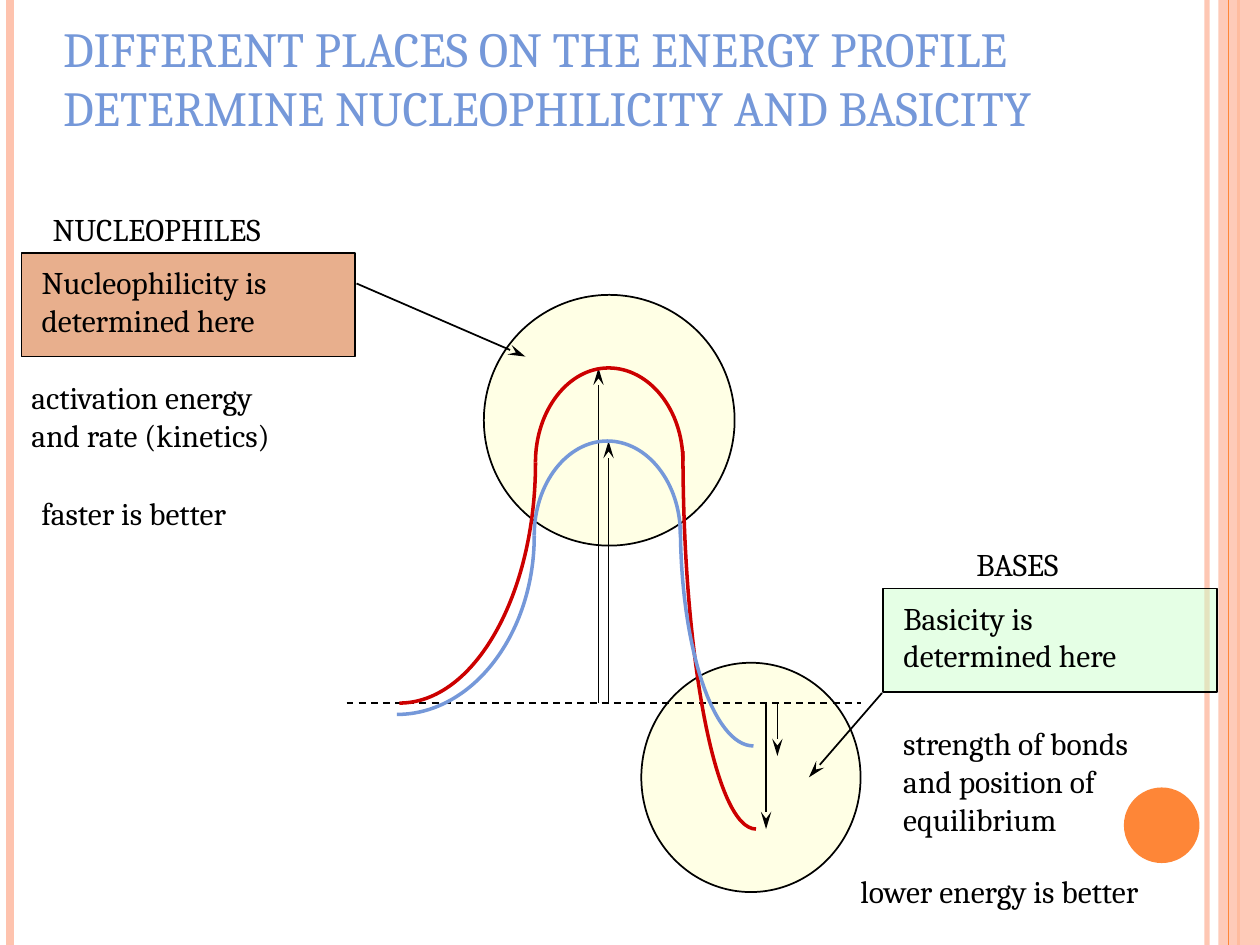
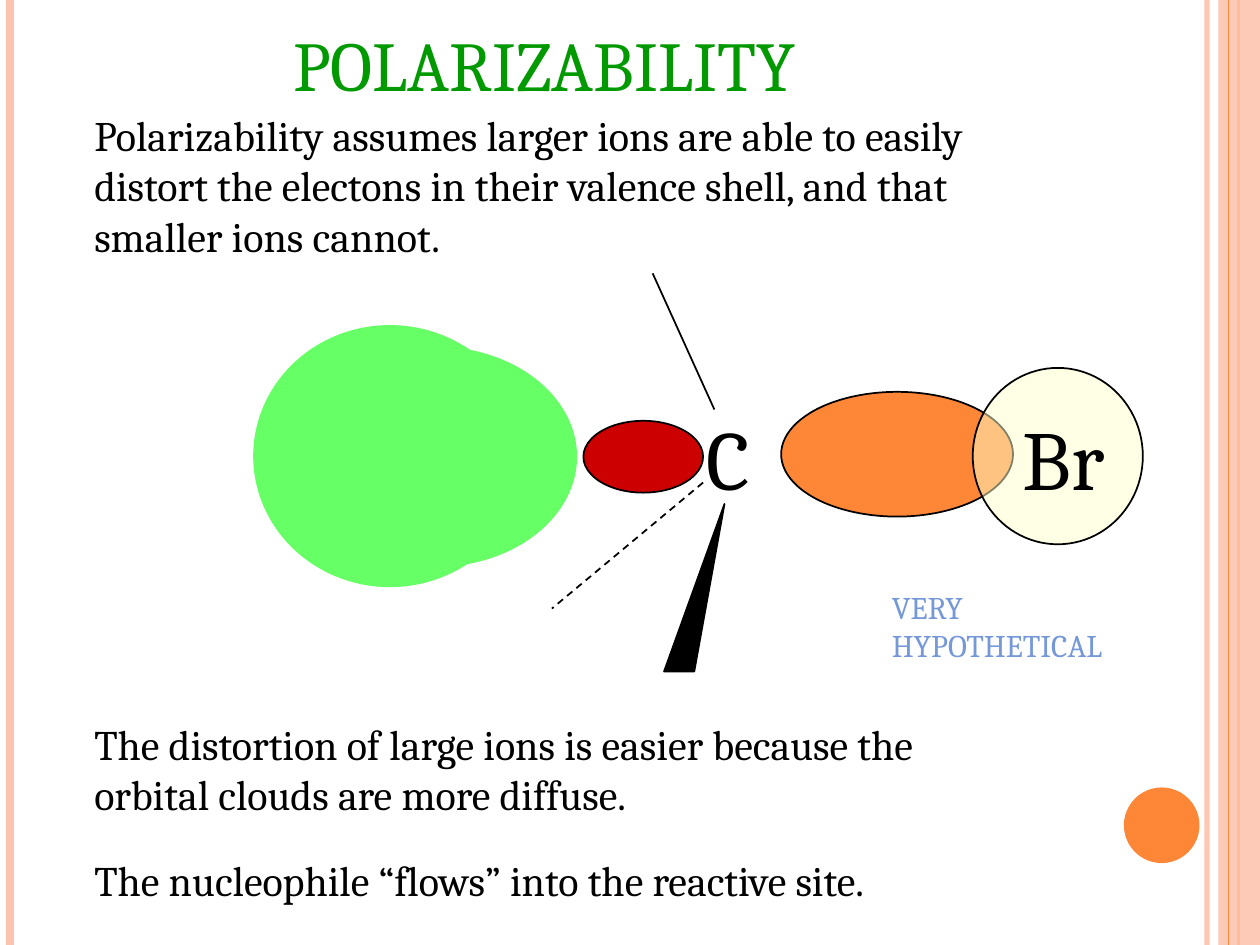
from dataclasses import dataclass

import lxml.etree
import pptx
import pptx.dml.color
import pptx.enum.dml
import pptx.enum.shapes
import pptx.enum.text
import pptx.oxml.ns
import pptx.util

Inches = pptx.util.Inches
Pt = pptx.util.Pt
qn = pptx.oxml.ns.qn
Preset = pptx.enum.shapes.MSO_SHAPE

# Distance of a control point from its end, as a share of the radius, in a quarter ellipse
QUARTER_ARC = 0.55


@dataclass(frozen=True)
class Theme:
    font: str = "Cambria"
    black: str = "000000"
    blue: str = "7598D9"
    red: str = "CC0000"
    title_green: str = "009900"
    cloud_green: str = "66FF66"
    pale_green: str = "CCFFCC"
    rust: str = "D2611C"
    cream: str = "FFFFCC"
    orange: str = "FE8637"
    peach: str = "FEC3AE"
    label_size: int = 18
    body_size: int = 24
    long_title_size: int = 28
    short_title_size: int = 40
    atom_size: int = 48
    outline: float = 1
    curve: float = 2


THEME = Theme()


def rgb(color):
    return pptx.dml.color.RGBColor.from_string(color)


def set_opacity(shape, percent):
    """Apply opacity to the first colour of a shape: its fill, or a connector's line."""
    color = shape._element.spPr.find(".//" + qn("a:srgbClr"))
    lxml.etree.SubElement(color, qn("a:alpha")).set("val", str(percent * 1000))


def set_line(shape, color, width=THEME.outline):
    shape.line.color.rgb = rgb(color)
    shape.line.width = Pt(width)


def write_text(shape, lines, *, size=THEME.label_size, color=THEME.black, margins=(0.1, 0.05)):
    """Write one paragraph per line, with margins given as (sides, top and bottom)."""
    frame = shape.text_frame
    frame.word_wrap = True
    frame.auto_size = pptx.enum.text.MSO_AUTO_SIZE.NONE
    frame.vertical_anchor = pptx.enum.text.MSO_ANCHOR.TOP
    frame.margin_left = frame.margin_right = Inches(margins[0])
    frame.margin_top = frame.margin_bottom = Inches(margins[1])
    frame.text = "\n".join(lines)
    for paragraph in frame.paragraphs:
        paragraph.alignment = pptx.enum.text.PP_ALIGN.LEFT
        paragraph.font.name = THEME.font
        paragraph.font.size = Pt(size)
        paragraph.font.color.rgb = rgb(color)


def add_label(slide, left, top, width, height, lines, **text_format):
    box = slide.shapes.add_textbox(Inches(left), Inches(top), Inches(width), Inches(height))
    write_text(box, lines, **text_format)


def set_title(slide, left, top, width, height, lines, **text_format):
    title = slide.shapes.title
    title.left, title.top = Inches(left), Inches(top)
    title.width, title.height = Inches(width), Inches(height)
    write_text(title, lines, **text_format)


def add_figure(slide, preset, left, top, width, height, fill, *, line=THEME.black, opacity=None):
    shape = slide.shapes.add_shape(
        preset, Inches(left), Inches(top), Inches(width), Inches(height))
    shape.shadow.inherit = False
    shape.fill.solid()
    shape.fill.fore_color.rgb = rgb(fill)
    if opacity is not None:
        set_opacity(shape, opacity)
    if line is None:
        shape.line.fill.background()
    else:
        set_line(shape, line)
    return shape


def add_callout(slide, left, top, fill, lines):
    box = add_figure(slide, Preset.RECTANGLE, left, top, 2.65, 0.82, fill, opacity=50)
    write_text(box, lines, margins=(0.16, 0.08))


def add_line(slide, start, end, *, color=THEME.black, width=THEME.outline,
             dashed=False, arrow=False, opacity=None):
    connector = slide.shapes.add_connector(
        pptx.enum.shapes.MSO_CONNECTOR.STRAIGHT, *map(Inches, (*start, *end)))
    set_line(connector, color, width)
    if dashed:
        connector.line.dash_style = pptx.enum.dml.MSO_LINE.DASH
    if arrow:
        line = connector.line._get_or_add_ln()
        head = lxml.etree.SubElement(line, qn("a:tailEnd"))
        head.set("type", "stealth")
        head.set("len", "lg")
    if opacity is not None:
        set_opacity(connector, opacity)
    lxml.etree.SubElement(connector._element.spPr, qn("a:effectLst"))


def add_outline(slide, points, *, closed):
    corners = [(Inches(x), Inches(y)) for x, y in points]
    builder = slide.shapes.build_freeform(*corners[0])
    builder.add_line_segments(corners[1:], close=closed)
    shape = builder.convert_to_shape()
    shape.shadow.inherit = False
    return shape


def add_curve(slide, points, color):
    """Draw Bezier curves through a start and then two controls and an end for each."""
    curve = add_outline(slide, points, closed=False)
    outline = curve._element.spPr.find(".//" + qn("a:path"))
    segments = outline.findall(qn("a:lnTo"))
    for first in range(0, len(segments), 3):
        bezier = lxml.etree.SubElement(outline, qn("a:cubicBezTo"))
        for segment in segments[first:first + 3]:
            bezier.append(segment[0])
            outline.remove(segment)
    curve.fill.background()
    set_line(curve, color, THEME.curve)


def quarter_arc(start, end, *, level_start):
    """Return the controls and end of a quarter ellipse, level at one end, upright at the other."""
    (x1, y1), (x2, y2) = start, end
    across, down = QUARTER_ARC * (x2 - x1), QUARTER_ARC * (y2 - y1)
    if level_start:
        return [(x1 + across, y1), (x2, y2 - down), end]
    return [(x1, y1 + down), (x2 - across, y2), end]


def add_energy_profile(slide, color, *, start, left_side, top, right_side, tail_start, end):
    """Draw a reaction curve as a peak, a rising foot and a falling tail."""
    add_curve(slide, [left_side, *quarter_arc(left_side, top, level_start=False),
                      *quarter_arc(top, right_side, level_start=True)], color)
    add_curve(slide, [left_side, *quarter_arc(left_side, start, level_start=False)], color)
    add_curve(slide, [end, *quarter_arc(end, tail_start, level_start=True)], color)


def add_frame(slide):
    """Draw the side bands and the disc that both slides share."""
    def add_rule(x, color, width, opacity=None):
        add_line(slide, (x, 0), (x, 7.5), color=color, width=width, opacity=opacity)

    add_rule(9.58, THEME.peach, 3, opacity=93)
    add_rule(0.08, THEME.peach, 4.5)
    add_rule(9.83, THEME.orange, 1.5)
    add_figure(slide, Preset.RECTANGLE, 9.67, 0, 0.33, 7.5, THEME.peach, line=None, opacity=87)
    add_rule(9.75, THEME.orange, 0.75)
    add_figure(slide, Preset.OVAL, 8.92, 6.25, 0.6, 0.6, THEME.orange, line=None)


def add_framed_slide(presentation):
    title_only_layout = presentation.slide_layouts[5]
    slide = presentation.slides.add_slide(title_only_layout)
    add_frame(slide)
    return slide


def build_energy_slide(presentation):
    slide = add_framed_slide(presentation)
    set_title(slide, 0.4, 0.1, 9.33, 1.03,
              ["DIFFERENT PLACES ON THE ENERGY PROFILE",
               "DETERMINE NUCLEOPHILICITY AND BASICITY"],
              size=THEME.long_title_size, color=THEME.blue)

    add_callout(slide, 7.01, 4.67, THEME.pale_green, ["Basicity is", "determined here"])
    add_callout(slide, 0.17, 2.01, THEME.rust, ["Nucleophilicity is", "determined here"])
    add_figure(slide, Preset.OVAL, 5.09, 5.26, 1.74, 1.82, THEME.cream, opacity=50)
    add_figure(slide, Preset.OVAL, 3.84, 2.34, 1.99, 1.99, THEME.cream, opacity=50)

    add_label(slide, 0.32, 1.62, 2.42, 0.43, ["NUCLEOPHILES"])
    add_label(slide, 0.15, 2.95, 2.65, 0.77, ["activation energy", "and rate (kinetics)"])
    add_label(slide, 0.23, 3.87, 2.18, 0.43, ["faster is better"])
    add_label(slide, 7.65, 4.28, 1.16, 0.43, ["BASES"])
    add_label(slide, 7.07, 5.7, 2.58, 1.1, ["strength of bonds", "and position of", "equilibrium"])
    add_label(slide, 6.73, 6.87, 3.16, 0.43, ["lower energy is better"])

    add_line(slide, (2.83, 2.25), (4.17, 2.83), arrow=True)
    add_line(slide, (7, 5.5), (6.42, 6.17), arrow=True)

    baseline = 5.58
    add_line(slide, (2.75, baseline), (6.83, baseline), dashed=True)
    for x, energy_level in ((4.75, 2.92), (4.83, 3.5), (6.08, 6.58), (6.17, 6)):
        add_line(slide, (x, baseline), (x, energy_level), arrow=True)

    add_energy_profile(slide, THEME.red, start=(3.17, 5.58), left_side=(4.25, 3.67),
                       top=(4.83, 2.92), right_side=(5.42, 3.66),
                       tail_start=(5.42, 3.58), end=(6, 6.58))
    add_energy_profile(slide, THEME.blue, start=(3.15, 5.67), left_side=(4.24, 4.25),
                       top=(4.82, 3.5), right_side=(5.4, 4.24),
                       tail_start=(5.4, 4.17), end=(5.98, 5.92))


def build_polarizability_slide(presentation):
    slide = add_framed_slide(presentation)
    set_title(slide, 2.23, 0.12, 4.86, 0.77, ["POLARIZABILITY"],
              size=THEME.short_title_size, color=THEME.title_green)
    add_label(slide, 0.65, 0.82, 8.47, 1.3,
              ["Polarizability assumes larger ions are able to easily",
               "distort the electons in their valence shell, and that",
               "smaller ions cannot."], size=THEME.body_size)

    add_figure(slide, Preset.OVAL, 4.63, 3.34, 0.95, 0.57, THEME.red)
    add_label(slide, 5.51, 3.18, 0.67, 0.9, ["C"], size=THEME.atom_size)
    add_line(slide, (5.18, 2.17), (5.67, 3.25))
    add_line(slide, (5.58, 3.83), (4.38, 4.83), dashed=True)
    wedge_bond = add_outline(slide, [(5.75, 4), (5.27, 5.33), (5.51, 5.33)], closed=True)
    wedge_bond.fill.solid()
    wedge_bond.fill.fore_color.rgb = rgb(THEME.black)
    set_line(wedge_bond, THEME.black)

    add_figure(slide, Preset.OVAL, 6.2, 3.11, 1.84, 0.99, THEME.orange)
    add_figure(slide, Preset.OVAL, 7.72, 2.92, 1.35, 1.4, THEME.cream, opacity=50)
    add_label(slide, 8.02, 3.18, 1.4, 0.9, ["Br"], size=THEME.atom_size)
    add_figure(slide, Preset.OVAL, 2.33, 2.75, 2.25, 1.75, THEME.cloud_green, line=None)
    add_figure(slide, Preset.OVAL, 2.01, 2.58, 2.17, 2.08, THEME.cloud_green, line=None)

    add_label(slide, 6.98, 4.62, 2.4, 0.77, ["VERY", "HYPOTHETICAL"], color=THEME.blue)
    add_label(slide, 0.65, 5.65, 8.12, 0.9,
              ["The distortion of large ions is easier because the",
               "orbital clouds are more diffuse."], size=THEME.body_size)
    add_label(slide, 0.65, 6.73, 7.49, 0.5,
              ["The nucleophile “flows” into the reactive site."], size=THEME.body_size)


def main():
    presentation = pptx.Presentation()
    presentation.slide_width = Inches(10)
    presentation.slide_height = Inches(7.5)
    build_energy_slide(presentation)
    build_polarizability_slide(presentation)
    presentation.save("out.pptx")


if __name__ == "__main__":
    main()
